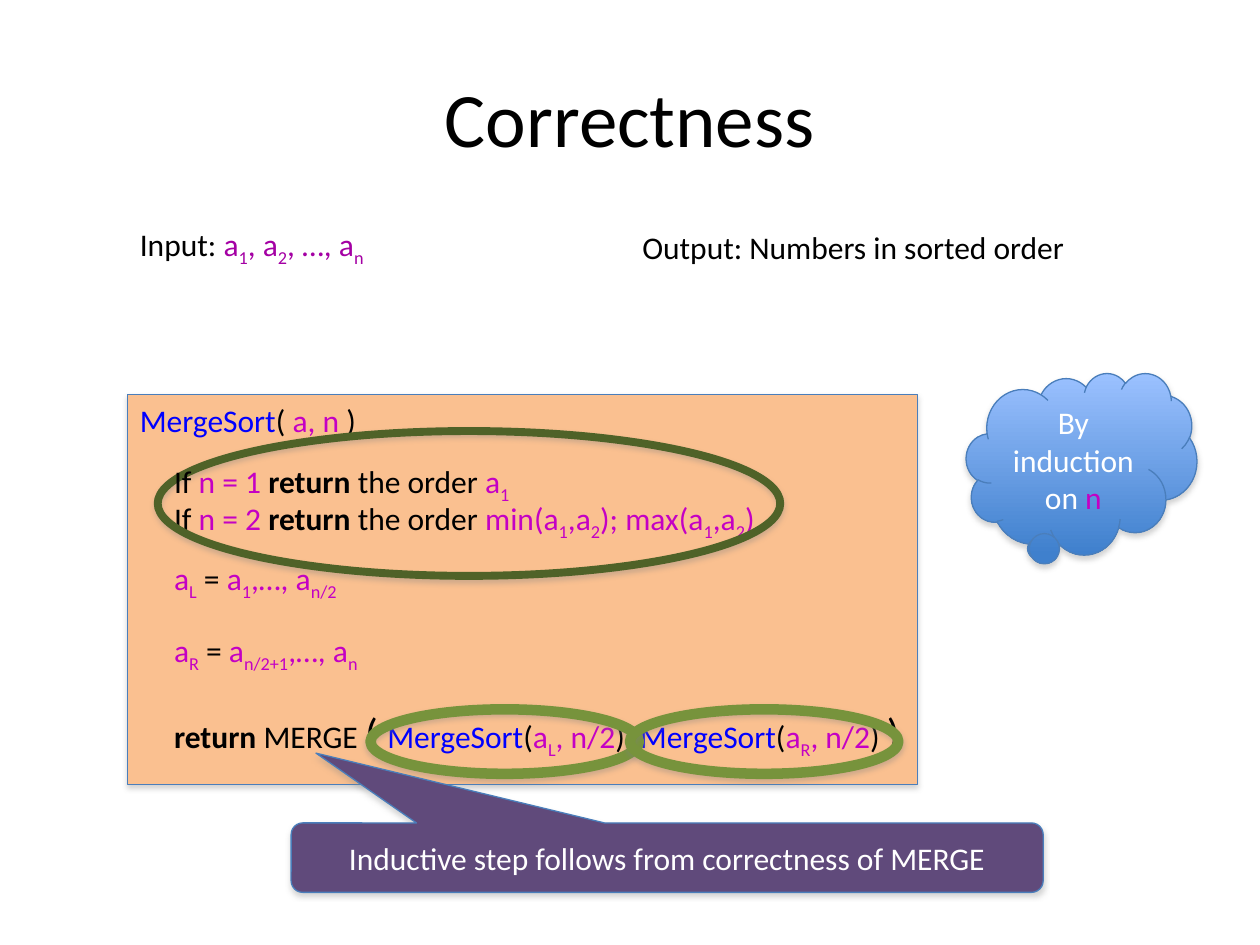
from lxml.etree import SubElement as Sub
from pptx import Presentation as Deck
from pptx.dml.color import RGBColor as RGB
from pptx.enum.shapes import MSO_SHAPE as Kind
from pptx.enum.text import MSO_ANCHOR as Anchor, MSO_AUTO_SIZE as Auto, PP_ALIGN as Align
from pptx.oxml.ns import qn
from pptx.util import Cm, Pt

HUES = {
    "ink": "000000", "white": "FFFFFF", "plum": "A400A4", "pink": "C400C4",
    "blue": "0000FF", "peach": "FAC090", "edge": "4A7EBB", "sky": "9BC1FF",
    "deep": "3F80CD", "moss": "4F6228", "leaf": "77933C", "grape": "604A7B",
    "shade": "808080",
}


def hue(name):
    return RGB.from_string(HUES[name])


def write(par, runs, size=18):
    """Add runs of (text, colour, style); style is sub, bold, big or absent."""
    for text, tint, *style in runs:
        run = par.add_run()
        run.text = text
        font = run.font
        font.name = "Calibri"
        font.size = Pt(24 if "big" in style else size)
        font.bold = "bold" in style
        font.color.rgb = hue(tint)
        if "sub" in style:
            run._r.get_or_add_rPr().set("baseline", "-25000")


def label(slide, box, runs):
    """One unwrapped line of text."""
    frame = slide.shapes.add_textbox(*map(Cm, box)).text_frame
    frame.word_wrap = False
    frame.auto_size = Auto.SHAPE_TO_FIT_TEXT
    write(frame.paragraphs[0], runs)


def shadow(shape):
    shape.shadow.inherit = False
    cast = Sub(shape._element.spPr.find(qn("a:effectLst")), qn("a:outerShdw"),
               blurRad="40000", dist="23000", dir="5400000", rotWithShape="0")
    tone = Sub(cast, qn("a:srgbClr"), val=HUES["shade"])
    Sub(tone, qn("a:alpha"), val="35000")


def block(slide, kind, box, fill=None, edge="edge", width=0.75, runs=()):
    """A preset shape with a soft shadow and centred text."""
    shape = slide.shapes.add_shape(kind, *map(Cm, box))
    if fill:
        shape.fill.solid()
        shape.fill.fore_color.rgb = hue(fill)
    else:
        shape.fill.background()
    shape.line.color.rgb = hue(edge)
    shape.line.width = Pt(width)
    shadow(shape)
    if runs:
        frame = shape.text_frame
        frame.word_wrap = True
        frame.vertical_anchor = Anchor.MIDDLE
        par = frame.paragraphs[0]
        par.alignment = Align.CENTER
        write(par, runs)
    return shape


def bend(shape, *vals):
    for i, val in enumerate(vals):
        shape.adjustments[i] = val


def head(slide, box):
    title = slide.shapes.title
    title.left, title.top, title.width, title.height = map(Cm, box)
    frame = title.text_frame
    frame.vertical_anchor = Anchor.MIDDLE
    par = frame.paragraphs[0]
    par.alignment = Align.CENTER
    write(par, [("Correctness", "ink")], 44)


def task(slide, box):
    """Input on the left, output on the right."""
    x, y, w, h = box
    label(slide, (x, y, 5.26, h), [
        ("Input: ", "ink"), ("a", "plum"), ("1", "plum", "sub"),
        (", a", "plum"), ("2", "plum", "sub"), (", …, a", "plum"),
        ("n", "plum", "sub")])
    label(slide, (x + w - 9.12, y + 0.05, 9.12, h),
          [("Output: Numbers in sorted order", "ink")])


def test(num):
    """Opening runs of a base case."""
    return [("If ", "ink"), (f"n = {num} ", "pink"), ("return", "ink", "bold"),
            (" the order ", "ink")]


def pair(name):
    """Runs of name(a1,a2 without the closing bracket."""
    return [(f"{name}(a", "pink"), ("1", "pink", "sub"), (",a", "pink"),
            ("2", "pink", "sub")]


def half(side, first, last):
    """Runs that define one half of the list."""
    return [("a", "pink"), (side, "pink", "sub"), (" = ", "ink"), ("a", "pink"),
            (first, "pink", "sub"), (",…, a", "pink"), (last, "pink", "sub")]


def call(side, end):
    """Runs of a recursive call."""
    return [("MergeSort", "blue"), ("(", "ink"), ("a", "pink"),
            (side, "pink", "sub"), (", n/2", "pink"), (end, "ink")]


def code(slide, box):
    """Algorithm panel with rings around its key parts."""
    x, y, w, h = box
    block(slide, Kind.RECTANGLE, box, "peach")
    label(slide, (x, y, 4.9, 1.02), [
        ("MergeSort", "blue"), ("( ", "ink"), ("a, n ", "pink"), (")", "ink")])
    merge = [("return", "ink", "bold"), (" MERGE ", "ink"), ("( ", "ink", "big"),
             *call("L", "), "), *call("R", ") "), (")", "ink", "big")]
    two = [*test(2), *pair("min"), *pair("); max"), (")", "pink")]
    dent = x + 0.69
    for dy, wide, tall, runs in (
            (1.98, 12.55, 1.02, two),
            (3.2, 3.96, 1.02, half("L", "1", "n/2")),
            (4.65, 4.45, 1.02, half("R", "n/2+1", "n")),
            (6.17, 15.24, 1.27, merge)):
        label(slide, (dent, y + dy, wide, tall), runs)
    # Rings: base cases, then the two calls
    block(slide, Kind.OVAL, (x + 0.61, y + 0.74, 12.55, 2.92),
          edge="moss", width=4.5)
    for dx in (4.9, 10.13):
        block(slide, Kind.OVAL, (x + dx, y + 6.35, 5.41, 1.3),
              edge="leaf", width=6)
    label(slide, (dent, y + 1.24, 7.37, 1.02),
          [*test(1), ("a", "pink"), ("1", "pink", "sub")])


def cloud(slide, box):
    shape = block(slide, Kind.CLOUD_CALLOUT, box, "sky",
                  runs=[("By induction on ", "white"), ("n", "pink")])
    bend(shape, -0.176, 0.468)
    shape.fill.gradient()
    shape.fill.gradient_angle = 270
    for stop, tint, pos in zip(shape.fill.gradient_stops, ("sky", "deep"), (0, 1)):
        stop.color.rgb = hue(tint)
        stop.position = pos


def note(slide, box):
    shape = block(slide, Kind.ROUNDED_RECTANGULAR_CALLOUT, box, "grape", runs=[
        ("Inductive step follows from correctness of MERGE", "white")])
    bend(shape, -0.467, -1.505, 0.167)


def main():
    deck = Deck()
    deck.slide_width, deck.slide_height = Cm(25.4), Cm(19.05)
    slide = deck.slides.add_slide(deck.slide_layouts[5])
    head(slide, (1.27, 0.76, 22.86, 3.18))
    task(slide, (2.57, 4.42, 19.25, 1.02))
    code(slide, (2.57, 7.95, 15.93, 7.87))
    cloud(slide, (19.48, 7.52, 4.65, 3.66))
    note(slide, (5.87, 16.59, 15.16, 1.4))
    deck.save("out.pptx")


if __name__ == "__main__":
    main()
